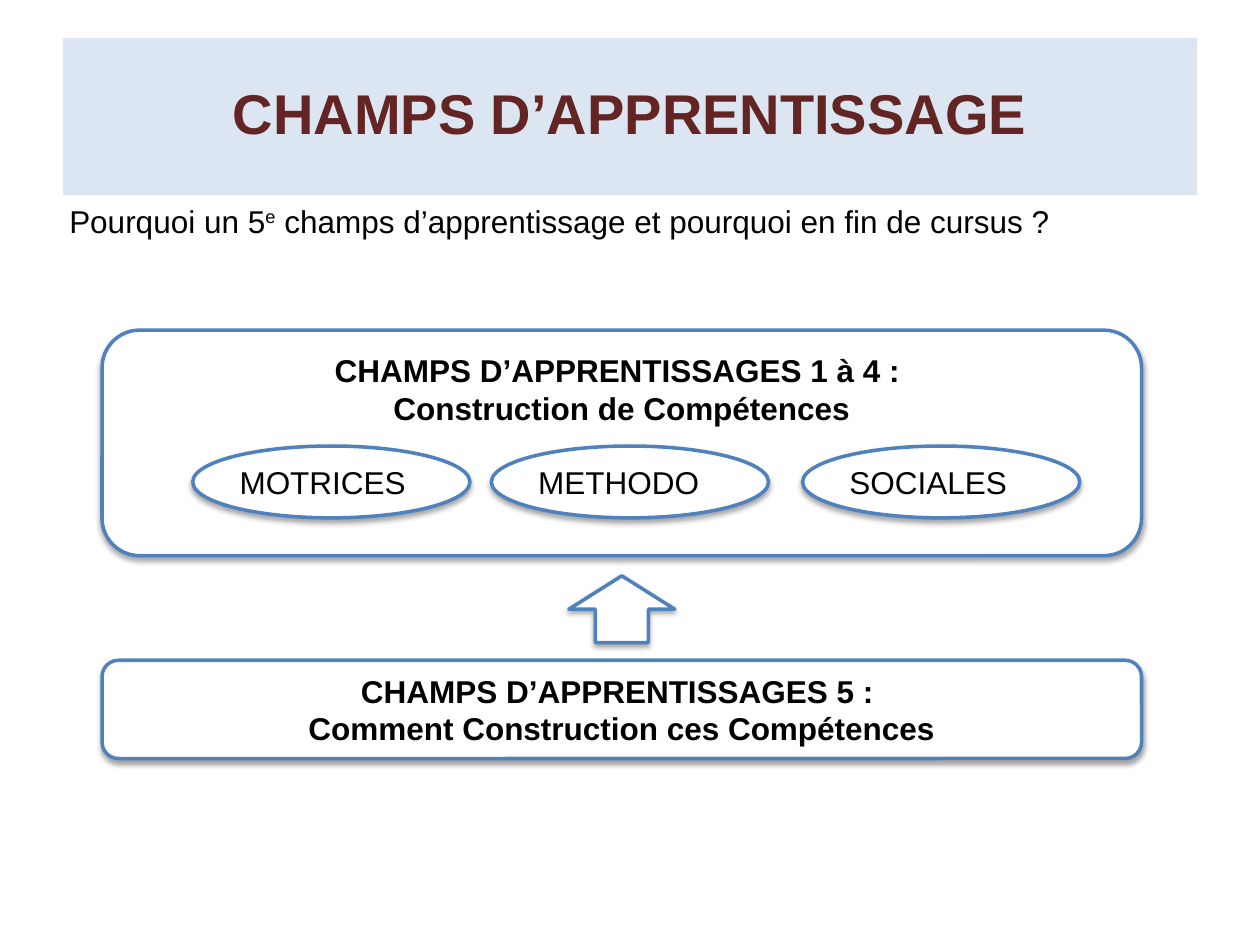
from lxml.etree import SubElement
from pptx import Presentation
from pptx.dml.color import RGBColor
from pptx.enum.shapes import MSO_SHAPE as Shape
from pptx.enum.text import MSO_ANCHOR as Anchor, PP_ALIGN as Align
from pptx.oxml.ns import qn
from pptx.util import Inches, Pt

COLORS = {"band": "DCE6F2", "title": "632523", "line": "4F81BD",
          "paper": "FFFFFF", "ink": "000000"}
FONT = "Arial"

TITLE = "CHAMPS D’APPRENTISSAGE"
QUESTION = [("Pourquoi un 5", False), ("e", True),
            (" champs d’apprentissage et pourquoi en fin de cursus ?", False)]
# lines, top, height, anchor, top inset
FIELDS = [
    (["CHAMPS D’APPRENTISSAGES 1 à 4 : ", "Construction de Compétences"],
     2.62, 1.79, Anchor.TOP, 0.08),
    (["CHAMPS D’APPRENTISSAGES 5 : ", "Comment Construction ces Compétences"],
     5.24, 0.78, Anchor.MIDDLE, 0.05),
]
SKILLS = [("MOTRICES", 1.53), ("METHODO", 3.9), ("SOCIALES", 6.37)]

MARGIN, WIDTH = 0.5, 9
BOX_LEFT, BOX_WIDTH = 0.81, 8.25
ARROW_WIDTH = 0.84


def color(name):
    return RGBColor.from_string(COLORS[name])


def add_run(para, text, size=18, bold=False, ink="ink"):
    run = para.add_run()
    run.text = text
    font = run.font
    font.name, font.size, font.bold = FONT, Pt(size), bold
    font.color.rgb = color(ink)
    return run


def set_frame(frame, anchor, inset=0.05, top=0.05):
    frame.word_wrap = True
    frame.vertical_anchor = anchor
    frame.margin_left = frame.margin_right = frame.margin_bottom = Inches(inset)
    frame.margin_top = Inches(top)


def add_shadow(shape):
    shape.shadow.inherit = False
    effects = shape._element.spPr.find(qn("a:effectLst"))
    outer = SubElement(effects, qn("a:outerShdw"), blurRad=str(Pt(3)),
                       dist=str(Pt(1.8)), dir="5400000", rotWithShape="0")
    tint = SubElement(outer, qn("a:srgbClr"), val=COLORS["ink"])
    SubElement(tint, qn("a:alpha"), val="35000")


def add_box(slide, kind, place, lines=(), align=Align.LEFT, bold=False,
            anchor=Anchor.MIDDLE, top=0.05):
    box = slide.shapes.add_shape(kind, *map(Inches, place))
    box.fill.solid()
    box.fill.fore_color.rgb = color("paper")
    box.line.color.rgb = color("line")
    box.line.width = Pt(2)
    add_shadow(box)
    frame = box.text_frame
    set_frame(frame, anchor, top=top)
    for i, line in enumerate(lines):
        para = frame.add_paragraph() if i else frame.paragraphs[0]
        para.alignment = align
        add_run(para, line, bold=bold)
    return box


def add_title(slide):
    title = slide.shapes.title
    title.left, title.top = Inches(MARGIN), Inches(0.3)
    title.width, title.height = Inches(WIDTH), Inches(1.25)
    title.fill.solid()
    title.fill.fore_color.rgb = color("band")
    set_frame(title.text_frame, Anchor.MIDDLE, inset=0, top=0)
    para = title.text_frame.paragraphs[0]
    para.alignment, para.line_spacing = Align.CENTER, 0.9
    add_run(para, TITLE, size=32, bold=True, ink="title")


def add_question(slide):
    box = slide.shapes.add_textbox(*map(Inches, (MARGIN, 1.55, WIDTH, 0.91)))
    set_frame(box.text_frame, Anchor.TOP)
    para = box.text_frame.paragraphs[0]
    for text, raised in QUESTION:
        run = add_run(para, text)
        if raised:
            run.font._element.set("baseline", "30000")


def main():
    deck = Presentation()
    deck.slide_width, deck.slide_height = Inches(10), Inches(7.5)
    slide = deck.slides.add_slide(deck.slide_layouts[5])
    add_title(slide)
    add_question(slide)
    for lines, top, height, anchor, inset in FIELDS:
        add_box(slide, Shape.ROUNDED_RECTANGLE,
                (BOX_LEFT, top, BOX_WIDTH, height), lines,
                Align.CENTER, True, anchor, inset)
    for name, left in SKILLS:
        add_box(slide, Shape.OVAL, (left, 3.54, 2.2, 0.57), [name])
    middle = BOX_LEFT + (BOX_WIDTH - ARROW_WIDTH) / 2
    arrow = add_box(slide, Shape.DOWN_ARROW, (middle, 4.57, ARROW_WIDTH, 0.53))
    arrow.rotation = 180
    deck.save("out.pptx")


if __name__ == "__main__":
    main()
